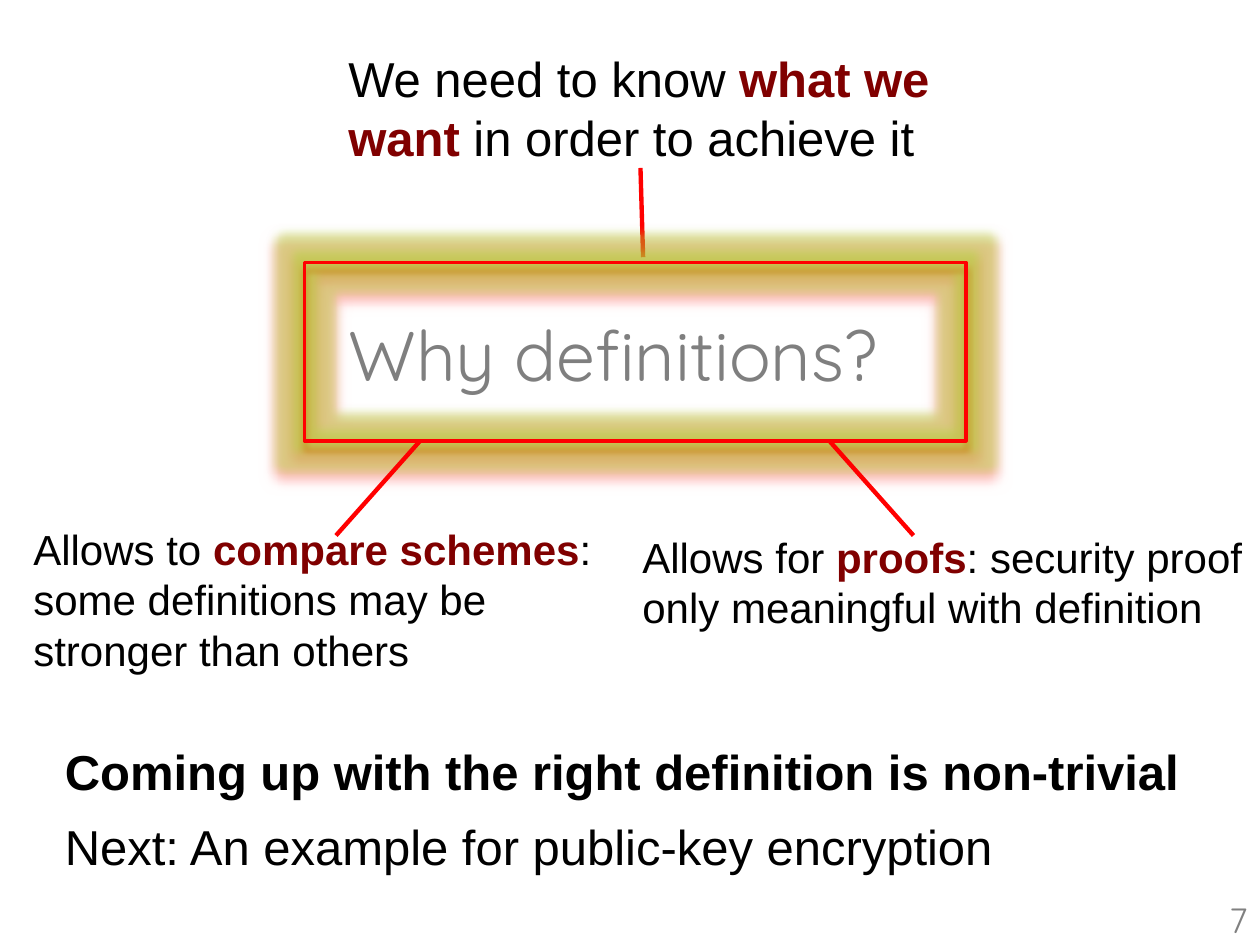
from dataclasses import dataclass

from lxml.etree import SubElement
from pptx import Presentation
from pptx.dml.color import RGBColor
from pptx.enum.shapes import MSO_CONNECTOR, MSO_SHAPE
from pptx.enum.text import MSO_ANCHOR, MSO_AUTO_SIZE, PP_ALIGN
from pptx.oxml import parse_xml
from pptx.oxml.ns import nsdecls, qn
from pptx.util import Inches, Pt

WIDTH, HEIGHT = 10, 7.5
COLUMN, ROW = WIDTH / 120, HEIGHT / 90  # grid of 120 columns by 90 rows


@dataclass(frozen=True)
class Theme:
    body_font: str = "Arial"
    title_font: str = "Quicksand"
    black: str = "000000"
    gray: str = "7F7F7F"
    number_gray: str = "808080"
    accent: str = "800000"
    red: str = "FF0000"
    glow: str = "9BBB59"
    title_size: int = 40
    large_size: int = 28
    medium_size: int = 24
    number_size: int = 20
    frame_width: float = 2
    connector_width: float = 2.5
    glow_radius: float = 11


THEME = Theme()


def place(columns, rows):
    """Turn a grid position or a grid size into lengths."""
    return Inches(columns * COLUMN), Inches(rows * ROW)


def add_run(paragraph, text, size, color=THEME.black, bold=False, font=THEME.body_font):
    run = paragraph.add_run()
    run.text = text
    run.font.name = font
    run.font.size = Pt(size)
    run.font.bold = bold
    run.font.color.rgb = RGBColor.from_string(color)


def add_text(slide, box, size, pieces):
    """Write (text, emphasis) pieces, where emphasis is a dict of run settings."""
    left, top, width, height = box
    shape = slide.shapes.add_textbox(*place(left, top), *place(width, height))
    shape.text_frame.word_wrap = True
    paragraph = shape.text_frame.paragraphs[0]
    for text, emphasis in pieces:
        add_run(paragraph, text, size, **emphasis)
    return shape


def add_branch(slide, start, end):
    """Draw a red line between the frame and one reason."""
    line = slide.shapes.add_connector(MSO_CONNECTOR.STRAIGHT, *place(*start), *place(*end))
    line.line.color.rgb = RGBColor.from_string(THEME.red)
    line.line.width = Pt(THEME.connector_width)
    SubElement(line.element.spPr, qn("a:effectLst"))


def add_reason(slide, box, size, before, key, after):
    """Write a reason with its key words emphasised."""
    strong = {"color": THEME.accent, "bold": True}
    add_text(slide, box, size, [(before, {}), (key, strong), (after, {})])


def add_title(slide, box):
    left, top, width, height = box
    title = slide.shapes.title
    title.left, title.top = place(left, top)
    title.width, title.height = place(width, height)
    frame = title.text_frame
    frame.auto_size = MSO_AUTO_SIZE.NONE
    frame.vertical_anchor = MSO_ANCHOR.MIDDLE
    paragraph = frame.paragraphs[0]
    paragraph.alignment = PP_ALIGN.LEFT
    add_run(paragraph, "Why definitions?", THEME.title_size, THEME.gray,
            font=THEME.title_font)


def add_frame(slide, box):
    """Draw the glowing frame around the title."""
    left, top, width, height = box
    frame = slide.shapes.add_shape(MSO_SHAPE.RECTANGLE, *place(left, top), *place(width, height))
    frame.fill.background()
    frame.line.color.rgb = RGBColor.from_string(THEME.red)
    frame.line.width = Pt(THEME.frame_width)
    frame.element.spPr.append(parse_xml(
        f'<a:effectLst {nsdecls("a")}>'
        f'<a:glow rad="{Pt(THEME.glow_radius)}"><a:srgbClr val="{THEME.glow}">'
        '<a:satMod val="175000"/><a:alpha val="40000"/></a:srgbClr></a:glow>'
        f'<a:outerShdw blurRad="{Pt(4)}" dist="{Pt(4)}" dir="5400000" rotWithShape="0">'
        f'<a:srgbClr val="{THEME.red}"/></a:outerShdw></a:effectLst>'))


def add_diagram(slide, box):
    """Place the framed title with its three reasons around it."""
    left, top, width, height = box
    bottom = top + height
    add_title(slide, (left + 3, top + 4, 65, 9.25))
    add_branch(slide, (left + 32, top - 9), (left + 32.25, top - 0.5))
    add_frame(slide, box)
    add_reason(slide, (left + 3, top - 21, 58, 12.5), THEME.large_size,
               "We need to know ", "what we want ", "in order to achieve it")
    add_branch(slide, (left + 11, bottom), (left + 3, bottom + 9))
    add_reason(slide, (left - 27, bottom + 7.25, 60, 15.75), THEME.medium_size,
               "Allows to ", "compare schemes",
               ": some definitions may be stronger than others")
    add_branch(slide, (left + width - 13, bottom), (left + width - 5, bottom + 9))
    add_reason(slide, (left + 31, bottom + 8, 60, 11), THEME.medium_size,
               "Allows for ", "proofs",
               ": security proof only meaningful with definition")


def add_conclusion(slide, box):
    """Write the closing statement and the outlook below it."""
    left, top, width, height = box
    lines = [("Coming up with the right definition is non-trivial", True),
             ("Next: An example for public-key encryption", False)]
    row_height = height / len(lines)
    for index, (text, bold) in enumerate(lines):
        add_text(slide, (left, top + index * row_height, width, row_height),
                 THEME.large_size, [(text, {"bold": bold})])


def add_page_number(slide, box):
    style = {"color": THEME.number_gray, "font": THEME.title_font}
    shape = add_text(slide, box, THEME.number_size, [("7", style)])
    shape.text_frame.vertical_anchor = MSO_ANCHOR.MIDDLE
    shape.text_frame.paragraphs[0].alignment = PP_ALIGN.RIGHT


def main():
    presentation = Presentation()
    presentation.slide_width, presentation.slide_height = Inches(WIDTH), Inches(HEIGHT)
    slide = presentation.slides.add_slide(presentation.slide_layouts[5])
    add_page_number(slide, (92, 85.2, 28, 4.8))
    add_diagram(slide, (29, 25, 63, 17))
    add_conclusion(slide, (5, 70, 119, 14.4))
    presentation.save("out.pptx")


if __name__ == "__main__":
    main()
